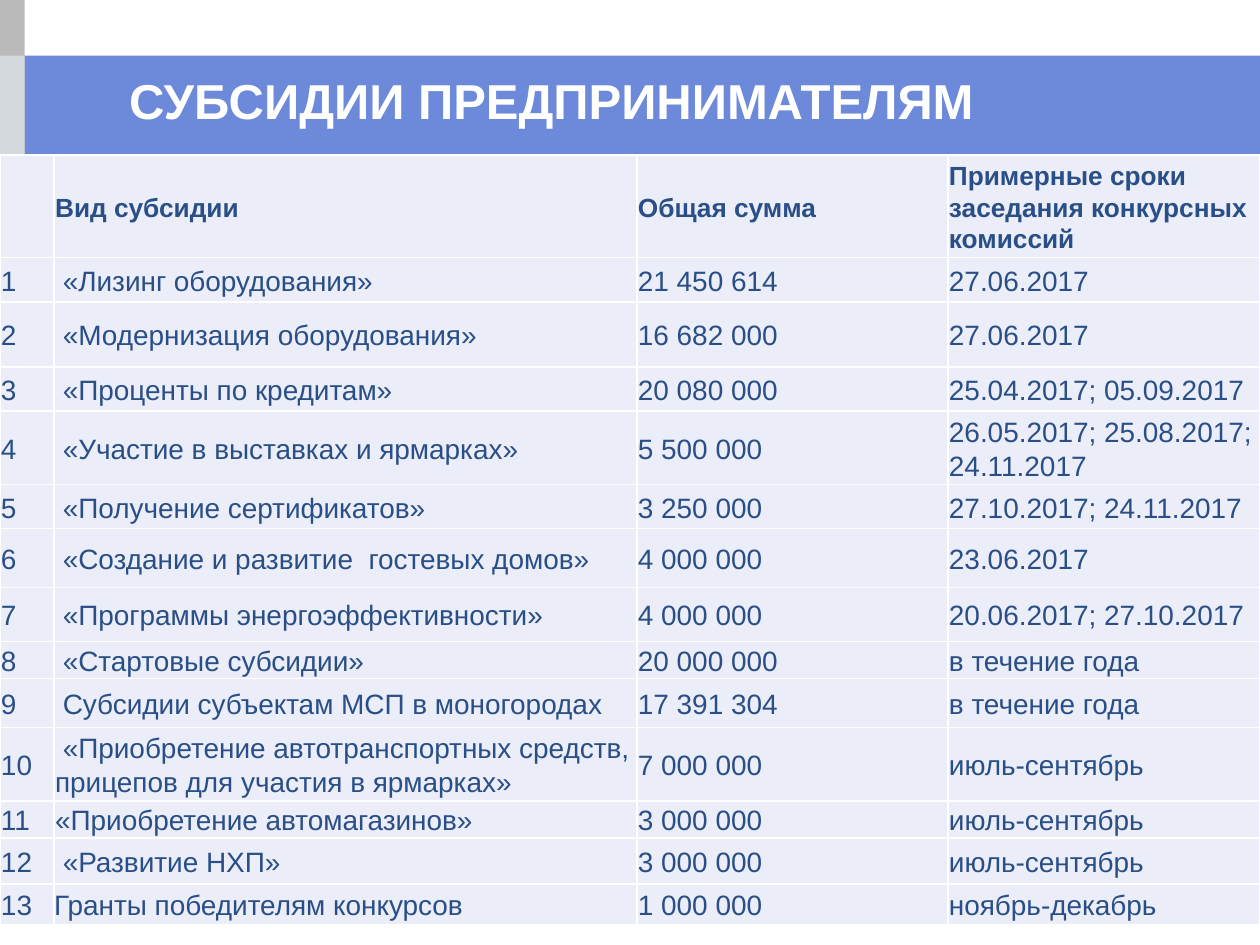
from lxml import etree
from pptx import Presentation
from pptx import util as u
from pptx.dml.color import RGBColor
from pptx.enum import shapes, text
from pptx.oxml.ns import qn

WHITE = RGBColor(0xFF, 0xFF, 0xFF)
BLUE = RGBColor(0x6C, 0x89, 0xDA)
NAVY = RGBColor(0x2A, 0x4F, 0x86)
GREY = RGBColor(0xBA, 0xBA, 0xBA)
LIGHT_GREY = RGBColor(0xD3, 0xD9, 0xDD)
PALE = RGBColor(0xEB, 0xED, 0xF8)
SKY = RGBColor(0x8F, 0xAF, 0xE9)
FONT = "Arial"

SLIDE_WIDTH, SLIDE_HEIGHT = 25.4, 19.05
HEADER_TOP, HEADER_HEIGHT = 1.12, 2
TABLE_TOP = HEADER_TOP + HEADER_HEIGHT

COLUMN_WIDTHS = [1.09, 11.75, 6.27, 6.28]
ROW_HEIGHTS = [2.06, 0.89, 1.31, 0.89, 1.46, 0.89, 1.18, 1.09, 0.74, 0.98, 1.46, 0.74, 0.92, 0.83]
HEADINGS = ("", "Вид субсидии", "Общая сумма", "Примерные сроки заседания конкурсных комиссий")
SUBSIDIES = [
    (" «Лизинг оборудования»", "21 450 614", "27.06.2017"),
    (" «Модернизация оборудования»", "16 682 000", "27.06.2017"),
    (" «Проценты по кредитам»", "20 080 000", "25.04.2017; 05.09.2017"),
    (" «Участие в выставках и ярмарках»", "5 500 000", "26.05.2017; 25.08.2017; 24.11.2017"),
    (" «Получение сертификатов»", "3 250 000", "27.10.2017; 24.11.2017"),
    (" «Создание и развитие  гостевых домов»", "4 000 000", "23.06.2017"),
    (" «Программы энергоэффективности»", "4 000 000", "20.06.2017; 27.10.2017"),
    (" «Стартовые субсидии»", "20 000 000", "в течение года"),
    (" Субсидии субъектам МСП в моногородах", "17 391 304", "в течение года"),
    (" «Приобретение автотранспортных средств, прицепов для участия в ярмарках»",
     "7 000 000", "июль-сентябрь"),
    ("«Приобретение автомагазинов»", "3 000 000", "июль-сентябрь"),
    (" «Развитие НХП»", "3 000 000", "июль-сентябрь"),
    ("Гранты победителям конкурсов", "1 000 000", "ноябрь-декабрь"),
]


def style_font(paragraph, size, color, bold):
    font = paragraph.font
    font.name, font.size, font.bold = FONT, u.Pt(size), bold
    font.color.rgb = color


def add_block(slide, left, top, width, height, color, line_width=0):
    shape = slide.shapes.add_shape(
        shapes.MSO_SHAPE.RECTANGLE, u.Cm(left), u.Cm(top), u.Cm(width), u.Cm(height))
    shape.shadow.inherit = False
    shape.fill.solid()
    shape.fill.fore_color.rgb = color
    if line_width:
        shape.line.color.rgb = color
        shape.line.width = u.Pt(line_width)
    else:
        shape.line.fill.background()


def add_backdrop(slide, left, top, width, height):
    strip_width = 0.5
    header_top = top + HEADER_TOP
    panel_top = top + 3.48
    add_block(slide, left, header_top, width, HEADER_HEIGHT, BLUE)
    add_block(slide, left, top, strip_width, height, GREY)
    # Colour squares down the side strip
    for index, color in enumerate((LIGHT_GREY, SKY, BLUE, NAVY)):
        square_top = header_top + index * HEADER_HEIGHT
        add_block(slide, left, square_top, strip_width, HEADER_HEIGHT, color)
    add_block(slide, left, panel_top, width, top + height - panel_top, WHITE, 2)


def add_title(slide, left, top, width, height):
    box = slide.shapes.add_textbox(u.Cm(left), u.Cm(top), u.Cm(width), u.Cm(height))
    frame = box.text_frame
    frame.word_wrap = True
    frame.vertical_anchor = text.MSO_ANCHOR.MIDDLE
    paragraph = frame.paragraphs[0]
    paragraph.text = "СУБСИДИИ ПРЕДПРИНИМАТЕЛЯМ"
    paragraph.alignment = text.PP_ALIGN.CENTER
    style_font(paragraph, 28, WHITE, True)


def add_borders(cell):
    properties = cell._tc.get_or_add_tcPr()
    for side in ("a:lnL", "a:lnR", "a:lnT", "a:lnB"):
        line = etree.SubElement(properties, qn(side), w=str(u.Pt(1)))
        fill = etree.SubElement(line, qn("a:solidFill"))
        etree.SubElement(fill, qn("a:srgbClr"), val=str(WHITE))


def fill_cell(cell, words, is_heading):
    add_borders(cell)
    cell.fill.solid()
    cell.fill.fore_color.rgb = PALE
    cell.vertical_anchor = text.MSO_ANCHOR.MIDDLE
    cell.margin_left = cell.margin_right = cell.margin_top = u.Cm(0.02)
    cell.margin_bottom = 0
    paragraph = cell.text_frame.paragraphs[0]
    paragraph.text = words
    paragraph.line_spacing = 1.08
    paragraph.space_after = u.Pt(10)
    style_font(paragraph, 15 if is_heading else 16, NAVY, is_heading)


def add_subsidy_table(slide, left, top, width, height):
    rows = [HEADINGS] + [(str(number), *row) for number, row in enumerate(SUBSIDIES, 1)]
    table = slide.shapes.add_table(
        len(rows), len(HEADINGS), u.Cm(left), u.Cm(top), u.Cm(width), u.Cm(height)).table
    for column, column_width in zip(table.columns, COLUMN_WIDTHS):
        column.width = u.Cm(column_width)
    for row, row_height in zip(table.rows, ROW_HEIGHTS):
        row.height = u.Cm(row_height)
    for row_index, row in enumerate(rows):
        for column_index, words in enumerate(row):
            fill_cell(table.cell(row_index, column_index), words, row_index == 0)
    # The grants cell has no insets
    grants = table.cell(len(rows) - 1, 1)
    grants.margin_left = grants.margin_right = grants.margin_top = 0


def main():
    presentation = Presentation()
    presentation.slide_width = u.Cm(SLIDE_WIDTH)
    presentation.slide_height = u.Cm(SLIDE_HEIGHT)
    slide = presentation.slides.add_slide(presentation.slide_layouts[6])
    add_backdrop(slide, 0, 0, SLIDE_WIDTH, SLIDE_HEIGHT)
    add_title(slide, -0.32, 0.43, 22.86, 3.18)
    add_subsidy_table(slide, 0, TABLE_TOP, SLIDE_WIDTH, sum(ROW_HEIGHTS))
    presentation.save("out.pptx")


if __name__ == "__main__":
    main()
